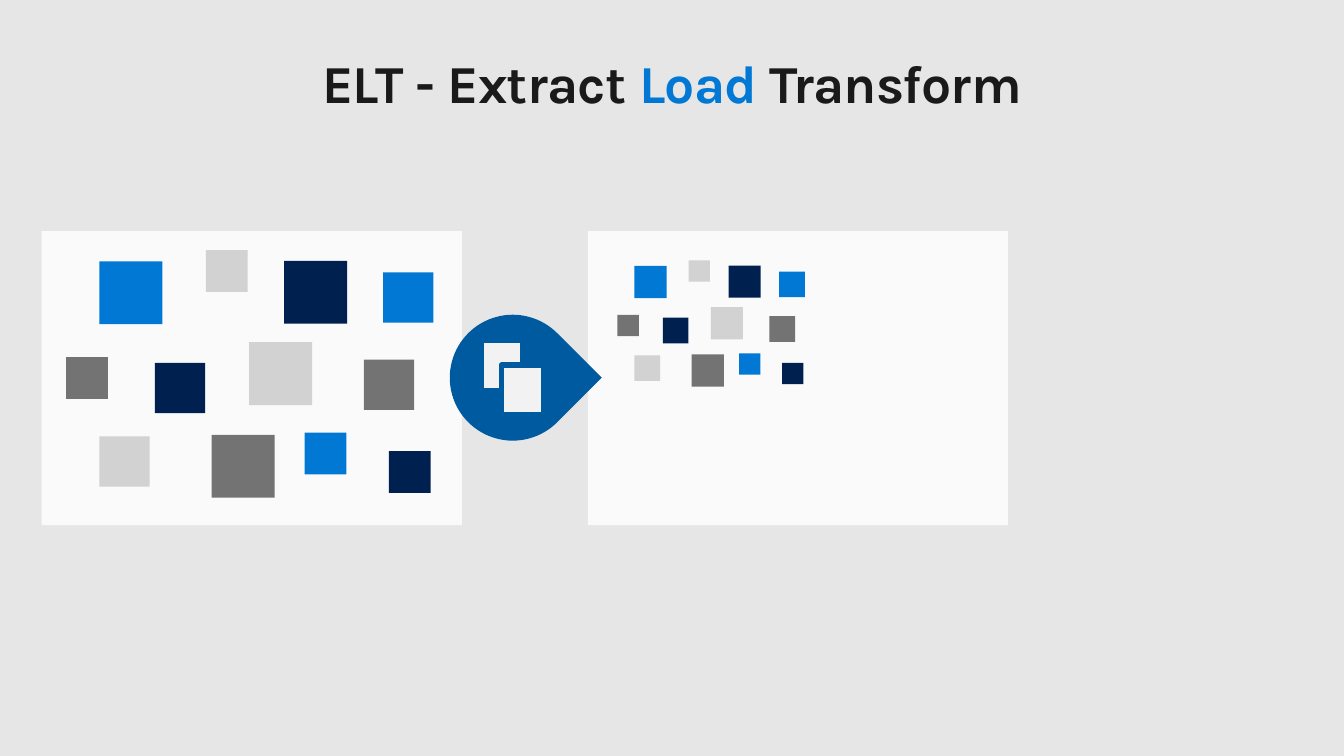
"""Build the ELT slide: source data is loaded unchanged into a smaller area of the target."""
from typing import NamedTuple

import pptx
import pptx.dml.color
import pptx.enum.shapes
import pptx.enum.text
import pptx.oxml.ns
import pptx.shapes.autoshape
import pptx.util

Cm = pptx.util.Cm
SHAPE = pptx.enum.shapes.MSO_SHAPE

BLUE, NAVY, LIGHT, DARK = "0078D4", "002050", "D2D2D2", "737373"
PANEL, ARROW, PAGE, INK, BACKDROP = "FAFAFA", "005A9F", "F2F2F2", "1A1A1A", "E6E6E6"
LARGE, MEDIUM, SMALL = 1.19, 0.95, 0.79


class Record(NamedTuple):
    x: float
    y: float
    size: float
    color: str


RECORDS = [
    Record(1.88, 4.94, LARGE, BLUE),
    Record(7.24, 5.15, MEDIUM, BLUE),
    Record(5.76, 8.18, SMALL, BLUE),
    Record(2.93, 6.86, MEDIUM, NAVY),
    Record(5.37, 4.93, LARGE, NAVY),
    Record(7.35, 8.53, SMALL, NAVY),
    Record(3.89, 4.73, SMALL, LIGHT),
    Record(4.71, 6.47, LARGE, LIGHT),
    Record(1.88, 8.25, MEDIUM, LIGHT),
    Record(4.00, 8.22, LARGE, DARK),
    Record(1.25, 6.75, SMALL, DARK),
    Record(6.88, 6.80, MEDIUM, DARK),
]


def rgb(color: str) -> pptx.dml.color.RGBColor:
    return pptx.dml.color.RGBColor.from_string(color)


def draw_shape(shapes, kind, x: float, y: float, width: float, height: float,
               color: str) -> pptx.shapes.autoshape.Shape:
    shape = shapes.add_shape(kind, Cm(x), Cm(y), Cm(width), Cm(height))
    shape.shadow.inherit = False
    shape.fill.solid()
    shape.fill.fore_color.rgb = rgb(color)
    shape.line.fill.background()
    return shape


def draw_panel(shapes, x: float) -> None:
    draw_shape(shapes, SHAPE.RECTANGLE, x, 4.37, 7.94, 5.56, PANEL)


def draw_records(shapes, left: float, top: float, scale: float) -> None:
    first_x = min(record.x for record in RECORDS)
    first_y = min(record.y for record in RECORDS)
    for record in RECORDS:
        size = record.size * scale
        draw_shape(shapes, SHAPE.RECTANGLE, left + (record.x - first_x) * scale,
                   top + (record.y - first_y) * scale, size, size, record.color)


def draw_load_arrow(shapes) -> None:
    drop = draw_shape(shapes, SHAPE.TEAR, 8.5, 5.95, 2.38, 2.38, ARROW)
    drop.rotation = 45
    pages = shapes.add_group_shape().shapes
    for x, y in [(9.09, 6.43), (9.48, 6.9)]:
        page = draw_shape(pages, SHAPE.RECTANGLE, x, y, 0.79, 0.95, PAGE)
        page.line.color.rgb = rgb(ARROW)
        page.line.width = pptx.util.Pt(3)


def draw_title(shapes) -> None:
    frame = shapes.add_textbox(Cm(1.19), Cm(0.94), Cm(23.02), Cm(1.19)).text_frame
    frame.word_wrap = True
    frame.margin_left = frame.margin_top = frame.margin_right = frame.margin_bottom = 0
    paragraph = frame.paragraphs[0]
    paragraph.alignment = pptx.enum.text.PP_ALIGN.CENTER
    for text, color in [("ELT - Extract ", INK), ("Load", BLUE), (" Transform", INK)]:
        run = paragraph.add_run()
        run.text = text
        run.font.name = "Karla"
        run.font.size = pptx.util.Pt(28.6)
        run.font.bold = True
        run.font.color.rgb = rgb(color)
        run._r.get_or_add_rPr().set("spc", "-40")


def main() -> None:
    deck = pptx.Presentation()
    deck.slide_width, deck.slide_height = Cm(25.4), Cm(14.29)
    slide = deck.slides.add_slide(deck.slide_layouts[6])
    slide.background.fill.solid()
    slide.background.fill.fore_color.rgb = rgb(BACKDROP)

    source = slide.shapes.add_group_shape().shapes
    draw_panel(source, 0.79)
    draw_records(source, 1.25, 4.73, 1)
    draw_panel(slide.shapes, 11.11)
    draw_load_arrow(slide.shapes)
    draw_title(slide.shapes)
    draw_records(slide.shapes.add_group_shape().shapes, 11.67, 4.92, 0.51)
    deck.save("out.pptx")


if __name__ == "__main__":
    main()
